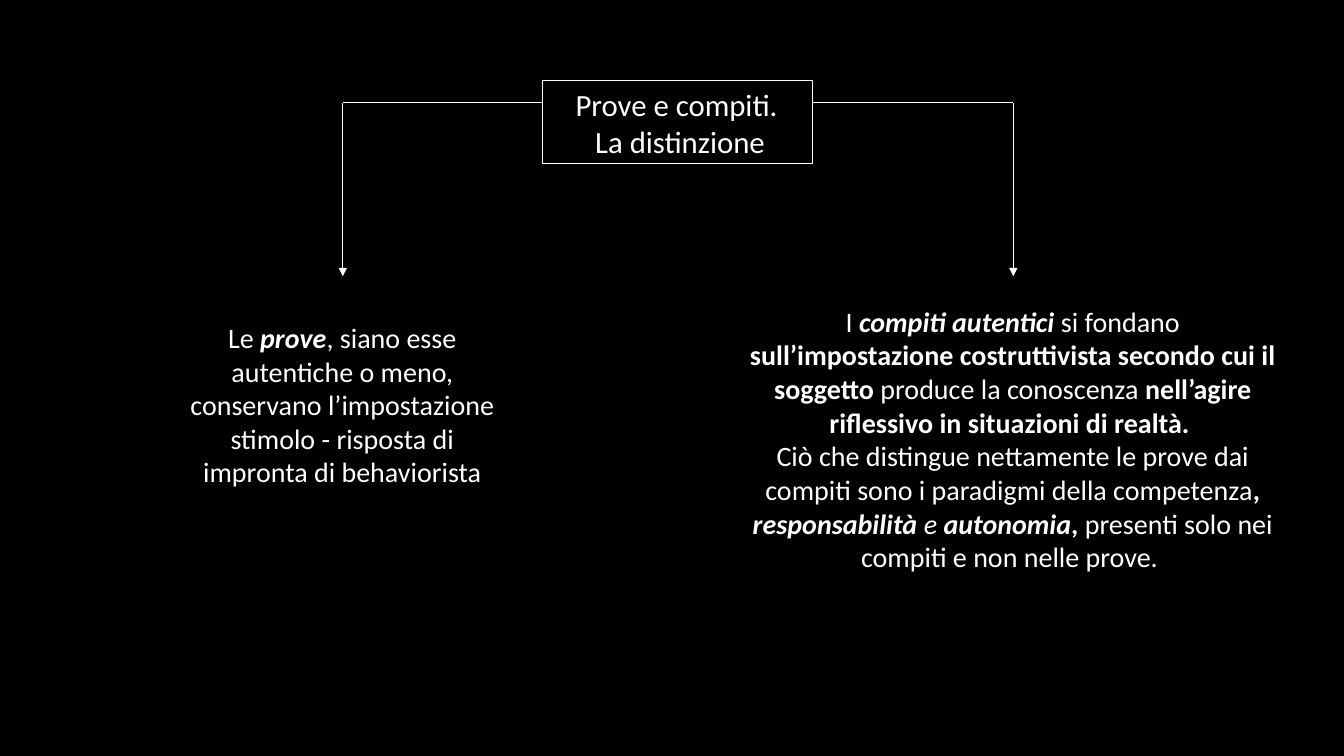
from pptx import Presentation
from pptx import util as u
from pptx.dml.color import RGBColor
from pptx.enum import shapes, text
from pptx.oxml.ns import qn
from lxml import etree

COLORS = {"background": "000000", "ink": "FFFFFF"}
INK = RGBColor.from_string(COLORS["ink"])
STYLES = {
    "plain": {"bold": False, "italic": False},
    "bold": {"bold": True, "italic": False},
    "italic": {"bold": False, "italic": True},
    "both": {"bold": True, "italic": True},
}

deck = Presentation()
deck.slide_width, deck.slide_height = u.Inches(13.33), u.Inches(7.5)
page = deck.slides.add_slide(deck.slide_layouts[6])
page.background.fill.solid()
page.background.fill.fore_color.rgb = RGBColor.from_string(COLORS["background"])

title = [
    [("Prove e compiti. ", "plain")],
    [("La distinzione", "plain")],
]
tests = [
    [
        ("Le ", "plain"),
        ("prove", "both"),
        (", siano esse autentiche o meno, conservano l’impostazione "
         "stimolo - risposta di impronta di behaviorista", "plain"),
    ],
]
tasks = [
    [
        ("I ", "plain"),
        ("compiti autentici ", "both"),
        ("si fondano ", "plain"),
        ("sull’impostazione costruttivista secondo cui il soggetto ", "bold"),
        ("produce la conoscenza ", "plain"),
        ("nell’agire riflessivo in situazioni di realtà. ", "bold"),
    ],
    [
        ("Ciò che distingue nettamente le prove dai compiti sono i paradigmi "
         "della competenza", "plain"),
        (", ", "bold"),
        ("responsabilità ", "both"),
        ("e ", "italic"),
        ("autonomia", "both"),
        (", ", "bold"),
        ("presenti solo nei compiti e non nelle prove. ", "plain"),
    ],
]

for area, size, paragraphs in [
    ((1.72, 3.13, 3.35, 1.78), 20, tests),
    ((4.83, 0.8, 3.83, 0.84), 22, title),
    ((7.33, 2.97, 5.43, 2.79), 20, tasks),
]:
    box = page.shapes.add_textbox(*map(u.Inches, area))
    frame = box.text_frame
    frame.word_wrap = True
    frame.auto_size = text.MSO_AUTO_SIZE.SHAPE_TO_FIT_TEXT
    for index, spans in enumerate(paragraphs):
        para = frame.add_paragraph() if index else frame.paragraphs[0]
        para.alignment = text.PP_ALIGN.CENTER
        for words, style in spans:
            span = para.add_run()
            span.text = words
            span.font.color.rgb = INK
            values = {"name": "Calibri", "size": u.Pt(size), **STYLES[style]}
            for name, value in values.items():
                setattr(span.font, name, value)

title_border = page.shapes.add_shape(
    shapes.MSO_SHAPE.RECTANGLE, *map(u.Inches, (5.38, 0.8, 2.68, 0.82))
)
title_border.shadow.inherit = False
title_border.fill.background()
title_border.line.color.rgb = INK
title_border.line.width = u.Pt(1)

branch_top, branch_bottom = 1.02, 2.74
for border_x, branch_x in [(5.38, 3.4), (8.06, 10.05)]:
    for start_x, end_y, arrow in [
        (border_x, branch_top, False),
        (branch_x, branch_bottom, True),
    ]:
        line = page.shapes.add_connector(
            shapes.MSO_CONNECTOR.STRAIGHT,
            *map(u.Inches, (start_x, branch_top, branch_x, end_y)),
        )
        line.line.color.rgb = INK
        line.line.width = u.Pt(0.5)
        if arrow:
            outline = line.line._get_or_add_ln()
            etree.SubElement(outline, qn("a:tailEnd"), type="triangle")
        etree.SubElement(line._element.spPr, qn("a:effectLst"))

deck.save("out.pptx")
